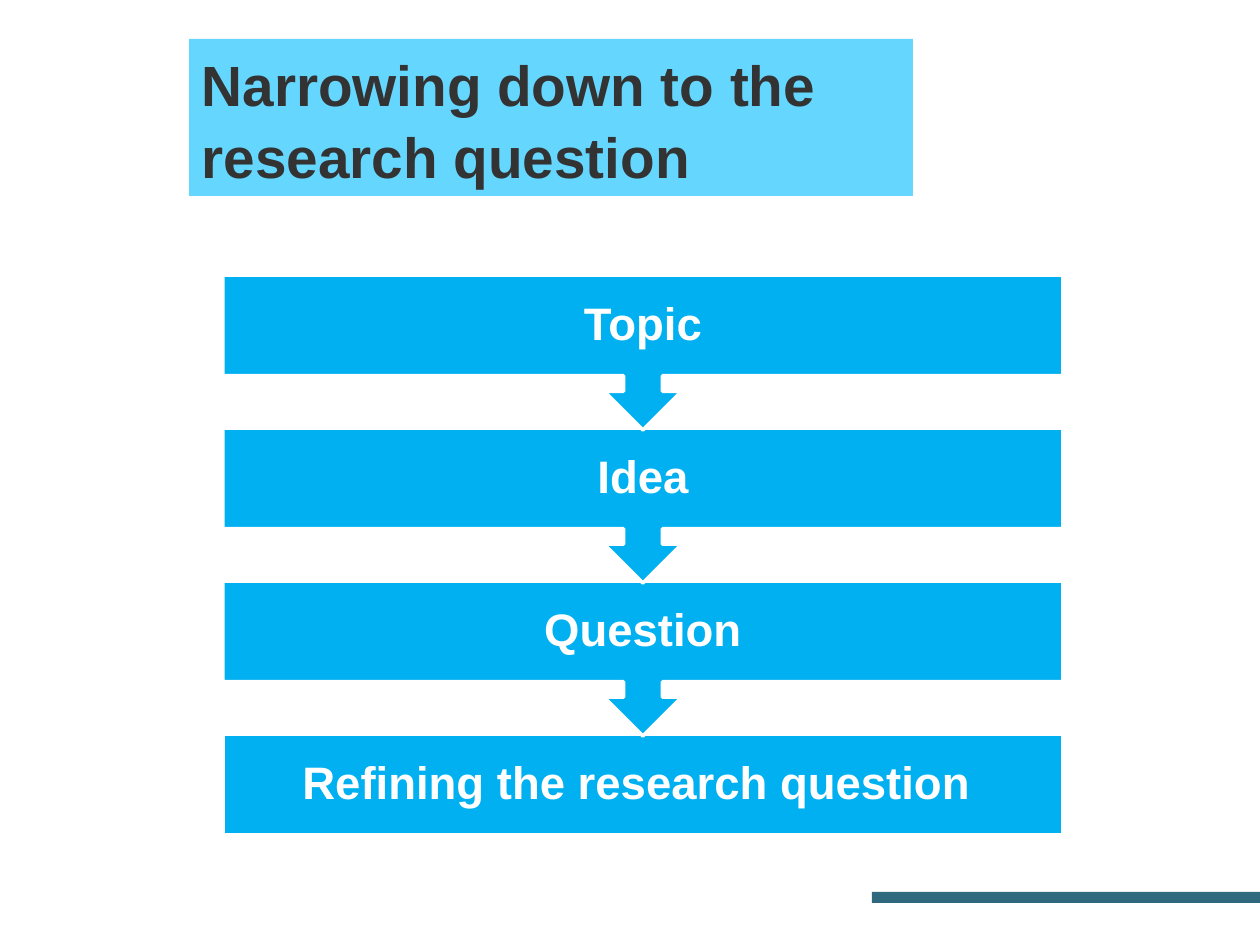
from pptx import Presentation
from pptx import util as u
from pptx.dml.color import RGBColor
from pptx.enum import shapes, text

SCALE = 914400 / 126
STEPS = ["Topic", "Idea", "Question", "Refining the research question "]
LEFT, TOP, WIDTH, PITCH = 223, 275, 840, 153
CALL_H, LAST_H = 155, 101


def px(n):
    return u.Emu(round(n * SCALE))


def color(code):
    return RGBColor.from_string(code)


def write(shape, words, size, ink, align, anchor, inset=None, space=1.0):
    frame = shape.text_frame
    frame.word_wrap = True
    frame.auto_size = text.MSO_AUTO_SIZE.NONE
    frame.vertical_anchor = anchor
    if inset is not None:
        frame.margin_left = frame.margin_right = px(inset)
        frame.margin_top = frame.margin_bottom = px(inset)
    para = frame.paragraphs[0]
    para.alignment = align
    para.line_spacing = space
    run = para.add_run()
    run.text = words
    font = run.font
    font.name, font.size, font.bold = "Arial", u.Pt(size), True
    font.color.rgb = color(ink)


def block(slide, kind, box, fill, line=None):
    shape = slide.shapes.add_shape(kind, *map(px, box))
    shape.shadow.inherit = False
    shape.fill.solid()
    shape.fill.fore_color.rgb = color(fill)
    if line:
        shape.line.color.rgb = color(line)
        shape.line.width = u.Pt(2)
    else:
        shape.line.fill.background()
    return shape


def head(slide, words):
    title = slide.shapes.title
    title.left, title.top, title.width, title.height = map(px, (189, 39, 724, 157))
    title.fill.solid()
    title.fill.fore_color.rgb = color("65D7FF")
    write(title, words, 32.4, "333333", text.PP_ALIGN.LEFT,
          text.MSO_ANCHOR.BOTTOM, space=1.05)


def flow(slide):
    """Stack the steps from the bottom up, so each arrow lies over the next box."""
    kinds = shapes.MSO_SHAPE
    last = len(STEPS) - 1
    for i in range(last, -1, -1):
        kind, high = ((kinds.RECTANGLE, LAST_H) if i == last
                      else (kinds.DOWN_ARROW_CALLOUT, CALL_H))
        step = block(slide, kind, (LEFT, TOP + i * PITCH, WIDTH, high),
                     "00B0F0", "FFFFFF")
        write(step, STEPS[i], 26, "FFFFFF", text.PP_ALIGN.CENTER,
              text.MSO_ANCHOR.MIDDLE, inset=25, space=0.9)


def main():
    deck = Presentation()
    deck.slide_width, deck.slide_height = px(1260), px(945)
    slide = deck.slides.add_slide(deck.slide_layouts[5])
    block(slide, shapes.MSO_SHAPE.RECTANGLE, (872, 892, 388, 11), "2E697E")
    head(slide, "Narrowing down to the research question")
    flow(slide)
    deck.save("out.pptx")


if __name__ == "__main__":
    main()
